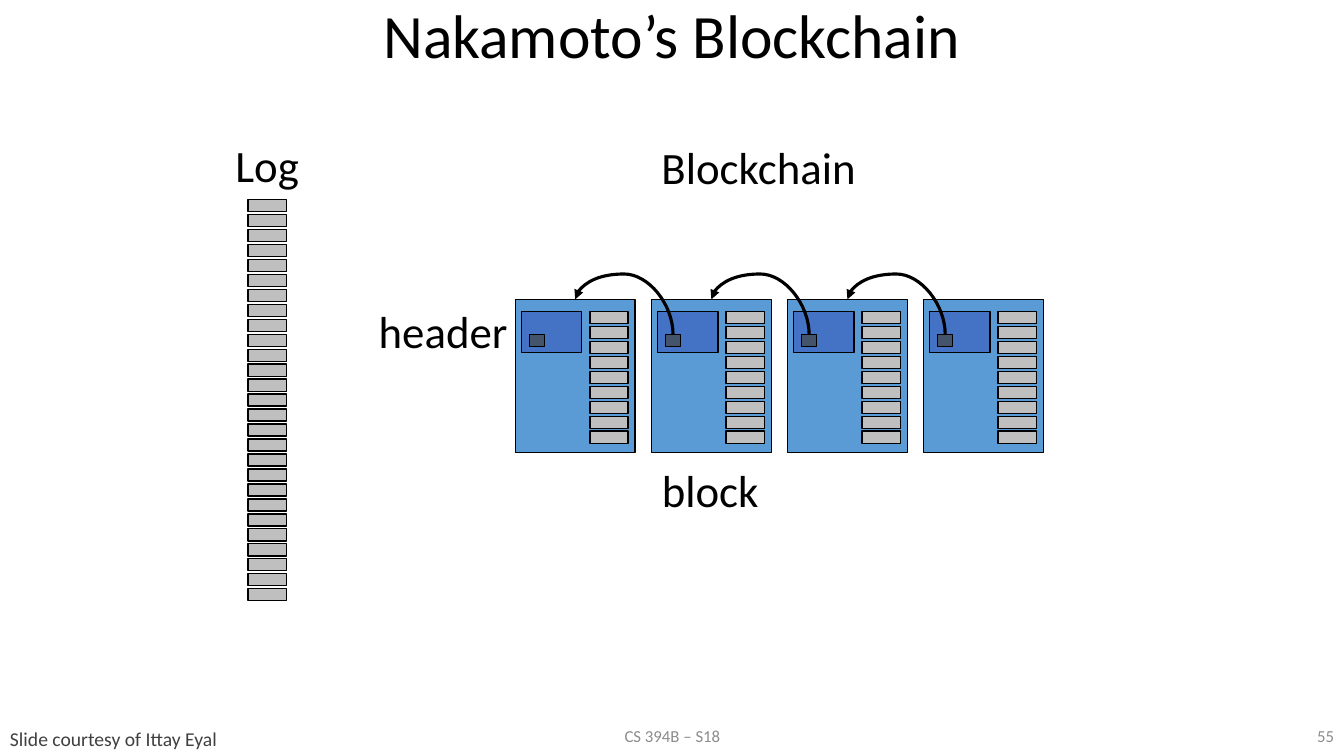
from lxml.etree import SubElement
from pptx import Presentation
from pptx.dml.color import RGBColor
from pptx.enum.shapes import MSO_CONNECTOR, MSO_SHAPE
from pptx.enum.text import MSO_ANCHOR, MSO_AUTO_SIZE, PP_ALIGN
from pptx.oxml.ns import qn
from pptx.util import Inches, Pt

BLACK = RGBColor(0x00, 0x00, 0x00)
ENTRY_GRAY = RGBColor(0xBF, 0xBF, 0xBF)
BLOCK_BLUE = RGBColor(0x5B, 0x9B, 0xD5)
HEADER_BLUE = RGBColor(0x44, 0x72, 0xC4)
HASH_SLATE = RGBColor(0x44, 0x54, 0x6A)
CREDIT_GRAY = RGBColor(0x40, 0x40, 0x40)
FOOTER_GRAY = RGBColor(0x8C, 0x8C, 0x8C)
FONT = "Calibri"

PAGE_WIDTH, PAGE_HEIGHT = 13.33, 7.5

# Log entries sit on a fixed row grid, blocks on a fixed column grid.
LOG_LEFT, LOG_TOP, LOG_ROWS = 2.46, 1.98, 27
ROW_PITCH = 3.86 / (LOG_ROWS - 1)
ENTRY_WIDTH, ENTRY_HEIGHT = 0.38, 0.12
CHAIN_LEFT, CHAIN_TOP, BLOCK_COUNT = 5.11, 2.97, 4
BLOCK_PITCH, BLOCK_WIDTH, BLOCK_HEIGHT = 1.35, 1.19, 1.52
BLOCK_ROWS = 9
HASH_X, HASH_Y, HASH_WIDTH = 0.14, 0.35, 0.15


def format_text(frame, text, size, color, align):
    paragraph = frame.paragraphs[0]
    paragraph.text = text
    paragraph.alignment = align
    paragraph.font.name = FONT
    paragraph.font.size = Pt(size)
    paragraph.font.color.rgb = color
    return paragraph


def add_title(page, text):
    title = page.shapes.title
    title.left, title.top = 0, 0
    title.width, title.height = Inches(PAGE_WIDTH), Inches(0.77)
    title.text_frame.vertical_anchor = MSO_ANCHOR.MIDDLE
    paragraph = format_text(title.text_frame, text, 44, BLACK, PP_ALIGN.CENTER)
    paragraph.line_spacing = 0.9


def add_label(page, text, left, top, width, height=0.64, size=32,
              color=BLACK, align=PP_ALIGN.CENTER):
    """Add a one-line label whose box fits its text."""
    box = page.shapes.add_textbox(*map(Inches, (left, top, width, height)))
    box.text_frame.word_wrap = False
    box.text_frame.auto_size = MSO_AUTO_SIZE.SHAPE_TO_FIT_TEXT
    format_text(box.text_frame, text, size, color, align)


def add_footer(page, text, left, width, align):
    box = page.shapes.add_textbox(*map(Inches, (left, 7.1, width, 0.4)))
    box.text_frame.word_wrap = True
    box.text_frame.vertical_anchor = MSO_ANCHOR.MIDDLE
    format_text(box.text_frame, text, 12, FOOTER_GRAY, align)


def add_rectangle(shapes, left, top, width, height, fill):
    box = shapes.add_shape(MSO_SHAPE.RECTANGLE,
                           *map(Inches, (left, top, width, height)))
    box.shadow.inherit = False
    box.fill.solid()
    box.fill.fore_color.rgb = fill
    box.line.color.rgb = BLACK
    box.line.width = Pt(1)


def add_entries(page, left, top, count):
    group = page.shapes.add_group_shape()
    for row in range(count):
        add_rectangle(group.shapes, left, top + row * ROW_PITCH,
                      ENTRY_WIDTH, ENTRY_HEIGHT, ENTRY_GRAY)


def add_block(page, left):
    add_rectangle(page.shapes, left, CHAIN_TOP, BLOCK_WIDTH, BLOCK_HEIGHT,
                  BLOCK_BLUE)
    add_entries(page, left + 0.74, CHAIN_TOP + 0.12, BLOCK_ROWS)
    add_rectangle(page.shapes, left + 0.06, CHAIN_TOP + 0.12, 0.6, 0.41,
                  HEADER_BLUE)
    add_rectangle(page.shapes, left + HASH_X, CHAIN_TOP + HASH_Y,
                  HASH_WIDTH, 0.12, HASH_SLATE)


def add_back_link(page, left):
    """Arc from the hash of the block at left to the top of the previous block."""
    start_x = left + HASH_X + HASH_WIDTH / 2
    end_x = left - BLOCK_PITCH + BLOCK_WIDTH / 2
    center_x, center_y = (start_x + end_x) / 2, CHAIN_TOP + HASH_Y / 2
    # The curve is laid out upright, then turned a quarter about its centre.
    half_width, half_height = HASH_Y / 2, (start_x - end_x) / 2
    link = page.shapes.add_connector(
        MSO_CONNECTOR.CURVE,
        Inches(center_x - half_width), Inches(center_y + half_height),
        Inches(center_x + half_width), Inches(center_y - half_height))
    link.line.color.rgb = BLACK
    link.line.width = Pt(2.25)
    properties = link.element.spPr
    properties.find(qn("a:xfrm")).set("rot", str(270 * 60000))
    geometry = properties.find(qn("a:prstGeom"))
    guides = geometry.find(qn("a:avLst"))
    if guides is None:
        guides = SubElement(geometry, qn("a:avLst"))
    SubElement(guides, qn("a:gd"), name="adj1", fmla="val 171900")
    SubElement(properties.find(qn("a:ln")), qn("a:tailEnd"), type="triangle")
    SubElement(properties, qn("a:effectLst"))


def main():
    deck = Presentation()
    deck.slide_width, deck.slide_height = Inches(PAGE_WIDTH), Inches(PAGE_HEIGHT)
    page = deck.slides.add_slide(deck.slide_layouts.get_by_name("Title Only"))

    add_title(page, "Nakamoto’s Blockchain")
    add_entries(page, LOG_LEFT, LOG_TOP, LOG_ROWS)

    block_lefts = [CHAIN_LEFT + i * BLOCK_PITCH for i in range(BLOCK_COUNT)]
    for left in block_lefts:
        add_block(page, left)
    for left in block_lefts[1:]:
        add_back_link(page, left)

    add_label(page, "Log", 2.23, 1.32, 0.84)
    add_label(page, "Blockchain", 6.45, 1.34, 2.15)
    add_label(page, "block", 6.46, 4.54, 1.17)
    add_label(page, "header", 3.65, 2.96, 1.49)
    add_label(page, "Slide courtesy of Ittay Eyal", 0, 7.16, 2.28, 0.34,
              14, CREDIT_GRAY, PP_ALIGN.LEFT)
    add_footer(page, "CS 394B – S18", 4.42, 4.5, PP_ALIGN.CENTER)
    add_footer(page, "55", 12.14, 1.19, PP_ALIGN.RIGHT)
    deck.save("out.pptx")


if __name__ == "__main__":
    main()
